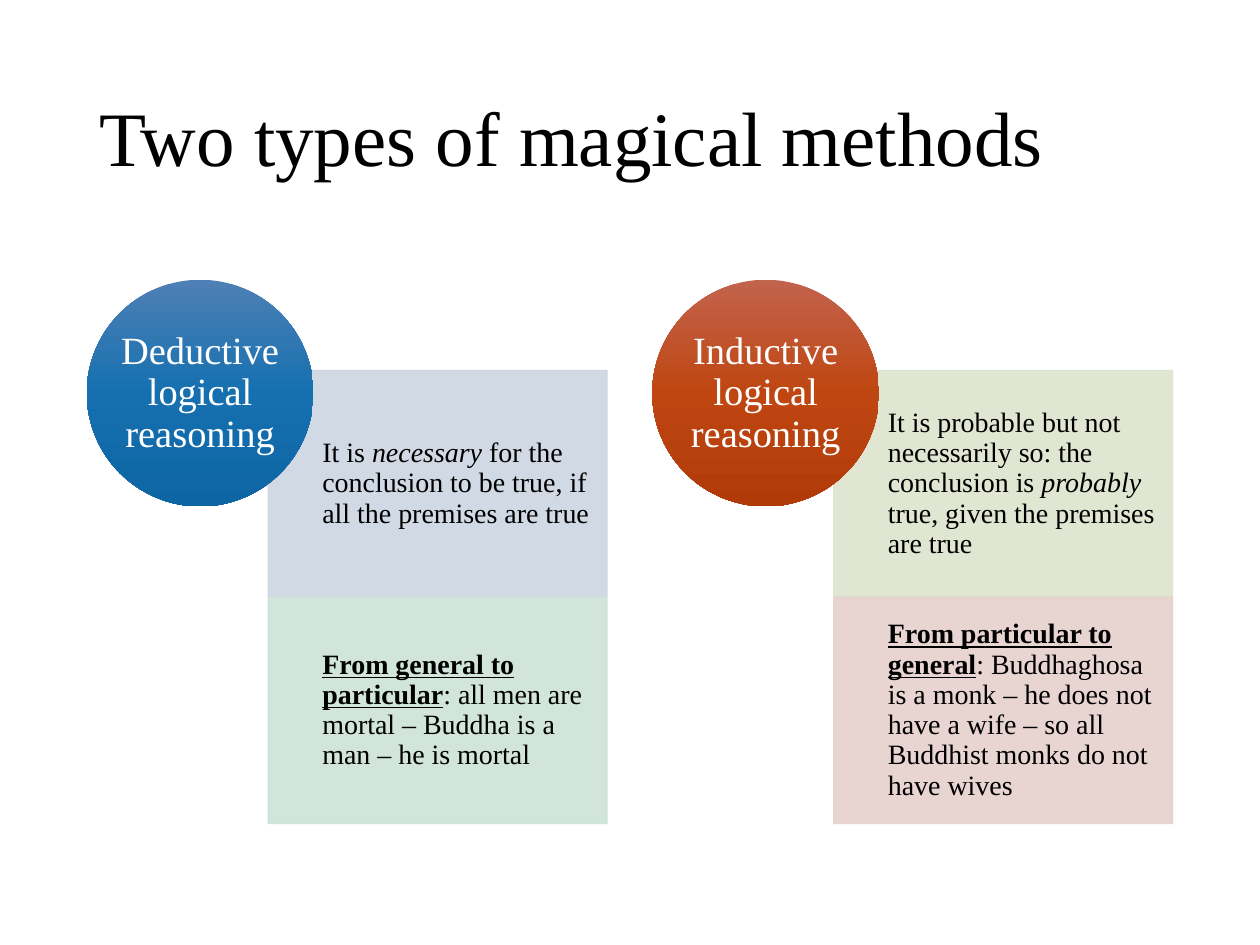
from copy import deepcopy
from math import sqrt

from lxml import etree
from pptx import Presentation
from pptx import util as u
from pptx.dml.color import RGBColor
from pptx.enum import shapes, text
from pptx.oxml.ns import qn

FONT = "Times New Roman"


def color(value):
    return RGBColor.from_string(value)


def add_text(parent, runs, x, y, w, h, size=16, fill="000000",
             align=text.PP_ALIGN.LEFT, insets=(0, 0.3, 0.3, 0.3)):
    s = parent.add_textbox(u.Cm(x), u.Cm(y), u.Cm(w), u.Cm(h))
    tf = s.text_frame
    tf.word_wrap = True
    tf.vertical_anchor = text.MSO_ANCHOR.MIDDLE
    tf.margin_left, tf.margin_top, tf.margin_right, tf.margin_bottom = map(u.Cm, insets)
    p = tf.paragraphs[0]
    p.alignment = align
    p.line_spacing = 0.9
    for content, style in runs:
        r = p.add_run()
        r.text = content
        r.font.name = FONT
        r.font.size = u.Pt(size)
        r.font.color.rgb = color(fill)
        r.font.italic = style == "italic"
        r.font.bold = r.font.underline = style == "key"


def add_panel(parent, runs, fill, x, y, w, h):
    s = parent.add_shape(shapes.MSO_SHAPE.RECTANGLE, u.Cm(x), u.Cm(y), u.Cm(w), u.Cm(h))
    s.shadow.inherit = False
    s.fill.solid()
    s.fill.fore_color.rgb = color(fill)
    s.line.color.rgb = color(fill)
    s.line.width = u.Pt(0.5)
    for clr in s._element.spPr.iter(qn("a:srgbClr")):
        etree.SubElement(clr, qn("a:alpha"), val="90000")
    indent = 0.16 * w
    add_text(parent, runs, x + indent, y, w - indent, h)


def add_circle(parent, label, colors, x, y, d):
    s = parent.add_shape(shapes.MSO_SHAPE.OVAL, u.Cm(x), u.Cm(y), u.Cm(d), u.Cm(d))
    s.shadow.inherit = False
    s.line.fill.background()
    s.fill.gradient()
    s.fill.gradient_angle = 270
    stops = s._element.spPr.find(qn("a:gradFill")).find(qn("a:gsLst"))
    stops.append(deepcopy(stops[-1]))
    for stop, position, value in zip(s.fill.gradient_stops, (0, 0.5, 1), colors):
        stop.position = position
        stop.color.rgb = color(value)
    side = d / sqrt(2)
    gap = (d - side) / 2
    add_text(parent, [(label, None)], x + gap, y + gap, side, side, size=22,
             fill="FFFFFF", align=text.PP_ALIGN.CENTER, insets=(0, 0, 0, 0))


def add_method(parent, method, x, y, w):
    d = 4.57
    left = 0.8 * d
    for i, (fill, runs) in enumerate(method["panels"]):
        add_panel(parent, runs, fill, x + left, y + (0.4 + i) * d, w - left, d)
    add_circle(parent, method["label"], method["gradient"], x, y, d)


METHODS = [
    {
        "label": "Deductive logical reasoning",
        "gradient": ("4E80B5", "1670B0", "0D65A3"),
        "panels": [
            ("CDD5E2", [("It is ", None), ("necessary", "italic"),
                        (" for the conclusion to be true, if all the premises are true", None)]),
            ("CDE3D7", [("From general to particular", "key"),
                        (": all men are mortal – Buddha is a man – he is mortal", None)]),
        ],
    },
    {
        "label": "Inductive logical reasoning",
        "gradient": ("C2634D", "BF4611", "B13B08"),
        "panels": [
            ("DDE4CC", [("It is probable but not necessarily so: the conclusion is ", None),
                        ("probably ", "italic"),
                        ("true, given the premises are true", None)]),
            ("E6D0CC", [("From particular to general", "key"),
                        (": Buddhaghosa is a monk – he does not have a wife – "
                         "so all Buddhist monks do not have wives", None)]),
        ],
    },
]


def main():
    prs = Presentation()
    prs.slide_width, prs.slide_height = u.Cm(25.4), u.Cm(19.05)
    slide = prs.slides.add_slide(prs.slide_layouts[6])
    add_text(slide.shapes, [("Two types of magical methods", None)],
             1.75, 1.02, 21.9, 3.68, size=44, insets=(0.25, 0.13, 0.25, 0.13))
    for i, method in enumerate(METHODS):
        add_method(slide.shapes, method, 1.75 + i * 11.4, 5.64, 10.49)
    prs.save("out.pptx")


if __name__ == "__main__":
    main()
